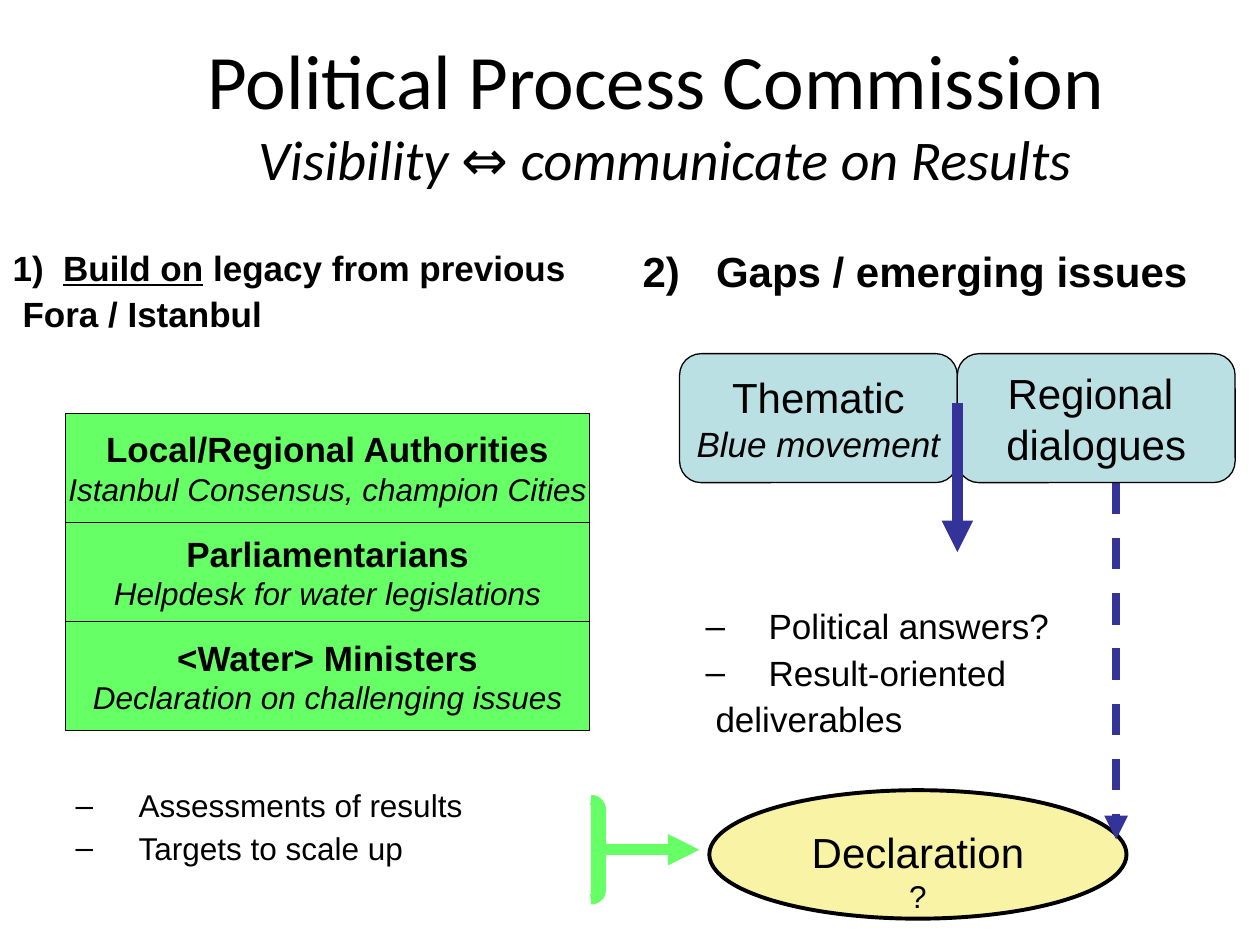
from dataclasses import dataclass
from lxml.etree import SubElement
from pptx import Presentation
from pptx.dml.color import RGBColor as RGB
from pptx.enum.dml import MSO_LINE as Dash
from pptx.enum.shapes import MSO_CONNECTOR as Link, MSO_SHAPE as Form
from pptx.enum.text import MSO_ANCHOR as Anchor, MSO_AUTO_SIZE as Fit, PP_ALIGN as Align
from pptx.oxml.ns import qn
from pptx.util import Cm, Pt


@dataclass
class Theme:
    black: RGB = RGB.from_string("000000")
    green: RGB = RGB.from_string("66FF66")
    blue: RGB = RGB.from_string("BBE0E3")
    navy: RGB = RGB.from_string("333399")
    cream: RGB = RGB.from_string("F9F3A5")
    head: Pt = Pt(44)
    sub: Pt = Pt(32)
    large: Pt = Pt(24)
    mid: Pt = Pt(20)
    small: Pt = Pt(18)


theme = Theme()


def style(font, size, bold=False, italic=False, name="Arial"):
    font.name, font.size = name, size
    font.bold, font.italic = bold, italic
    font.color.rgb = theme.black


def add_box(form, spot, fill, edge, width, rows=()):
    box = slide.shapes.add_shape(form, *map(Cm, spot))
    box.shadow.inherit = False
    box.fill.solid()
    box.fill.fore_color.rgb = fill
    box.line.color.rgb = edge
    box.line.width = Pt(width)
    frame = box.text_frame
    frame.word_wrap = False
    frame.vertical_anchor = Anchor.MIDDLE
    for i, (text, size, bold, italic) in enumerate(rows):
        para = frame.add_paragraph() if i else frame.paragraphs[0]
        para.text = text
        para.alignment = Align.CENTER
        style(para.font, size, bold, italic)
    return box


deck = Presentation()
deck.slide_width, deck.slide_height = Cm(25.4), Cm(19.05)
slide = deck.slides.add_slide(deck.slide_layouts[3])
title, left, right = slide.placeholders

add_box(Form.OVAL, (14.3, 15.93, 8.41, 2.59), theme.cream, theme.black, 2.25)

title.left, title.top, title.width, title.height = map(Cm, (2.69, 0, 21.44, 4.52))
frame = title.text_frame
frame.auto_size = Fit.NONE
frame.vertical_anchor = Anchor.MIDDLE
para = frame.paragraphs[0]
para.alignment = Align.CENTER
run = para.add_run()
run.text = "Political Process Commission "
style(run.font, theme.head, name="Calibri")
para.add_line_break()
run = para.add_run()
run.text = "Visibility ⇔ communicate on Results"
style(run.font, theme.sub, italic=True, name="Calibri")

dash = ("buChar", {"char": "–"})
count = ("buAutoNum", {"type": "arabicParenR", "startAt": "2"})
plain = ("buNone", {})
lists = [
    (left, (0, 4.93, 13.44, 13.41), [
        (("1)\t", "Build on", " legacy from previous"), theme.mid, True, 0, 1.02, -1.02, 5, plain),
        (("Fora / Istanbul",), theme.mid, True, 0, 0.2, 0, 5, plain),
        (("Assessments of results",), theme.small, False, 1, 2.54, -1.27, 260, dash),
        (("Targets to scale up",), theme.small, False, 1, 2.54, -1.27, 5, dash),
    ]),
    (right, (12.7, 4.93, 12.5, 12.6), [
        (("Gaps / emerging issues",), theme.large, True, 0, 1.48, -1.48, 5, count),
        (("Political answers?",), theme.mid, False, 1, 2.54, -1.27, 179, dash),
        (("Result-oriented",), theme.mid, False, 1, 2.54, -1.27, 5, dash),
        (("deliverables",), theme.mid, False, 1, 1.47, 0, 5, plain),
    ]),
]
for body, spot, rows in lists:
    body.left, body.top, body.width, body.height = map(Cm, spot)
    frame = body.text_frame
    frame.auto_size = Fit.NONE
    for i, (parts, size, bold, level, margin, indent, gap, mark) in enumerate(rows):
        para = frame.add_paragraph() if i else frame.paragraphs[0]
        for part in parts:
            run = para.add_run()
            run.text = part
            if part == "Build on":
                run.font.underline = True
        para.level = level
        para.line_spacing = 0.9
        para.space_before = Pt(gap)
        props = para._p.get_or_add_pPr()
        props.set("marL", str(Cm(margin)))
        props.set("indent", str(Cm(indent)))
        SubElement(props, qn("a:" + mark[0]), mark[1])
        style(para.font, size, bold)

top = 8.33
groups = [
    ("Local/Regional Authorities", "Istanbul Consensus, champion Cities", 2.2),
    ("Parliamentarians", "Helpdesk for water legislations", 2),
    ("<Water> Ministers", "Declaration on challenging issues", 2.2),
]
for name, note, tall in groups:
    rows = [(name, theme.mid, True, False), (note, theme.small, False, True)]
    add_box(Form.RECTANGLE, (1.32, top, 10.57, tall), theme.green, theme.black, 0.75, rows)
    top += tall

brace = add_box(Form.RIGHT_BRACKET, (11.91, 16.13, 0.2, 2), theme.green, theme.green, 6)
brace.adjustments[0] = 0.84

tracks = [
    [("Thematic", theme.large, False, False), ("Blue movement", theme.mid, False, True)],
    [("Regional ", theme.large, False, False), ("dialogues", theme.large, False, False)],
]


def add_arrow(ends, color, width, dashed=False):
    line = slide.shapes.add_connector(Link.STRAIGHT, *map(Cm, ends))
    line.line.color.rgb = color
    line.line.width = Pt(width)
    if dashed:
        line.line.dash_style = Dash.DASH
    props = line.element.spPr
    SubElement(props.find(qn("a:ln")), qn("a:tailEnd"), type="triangle")
    SubElement(props, qn("a:effectLst"))


add_arrow((12.1, 17.13, 14.1, 17.13), theme.green, 6)
add_arrow((22.5, 9.73, 22.5, 16.92), theme.navy, 4.5, True)
for i, rows in enumerate(tracks):
    add_box(Form.ROUNDED_RECTANGLE, (13.7 + 5.6 * i, 7.13, 5.6, 2.6), theme.blue, theme.black, 0.75, rows)
add_arrow((19.3, 8.13, 19.3, 11.13), theme.navy, 6)

note = slide.shapes.add_textbox(*map(Cm, (15.9, 16.53, 5.21, 2.06)))
note.text_frame.word_wrap = True
para = note.text_frame.paragraphs[0]
para.alignment = Align.CENTER
for text, size in (("Declaration ", theme.large), ("?", theme.small)):
    run = para.add_run()
    run.text = text
    style(run.font, size)

deck.save("out.pptx")
